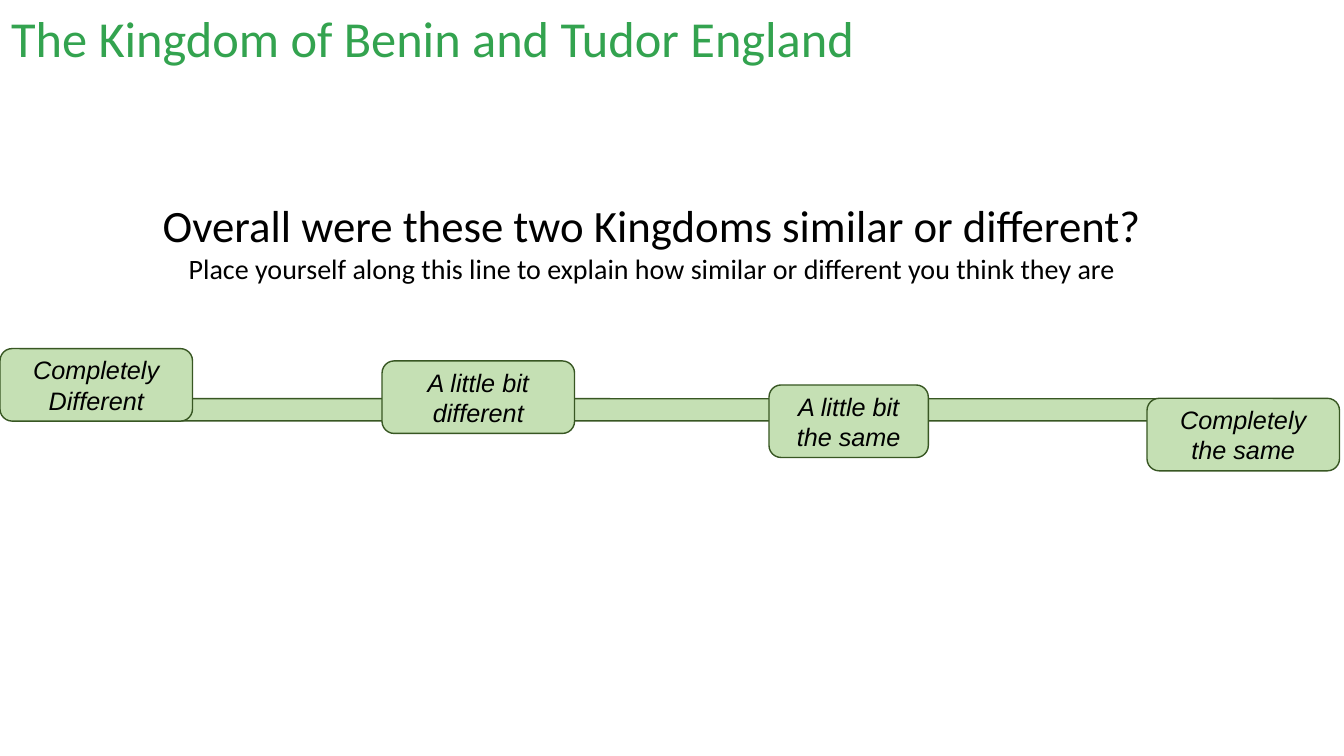
"""Build a slide placing Benin and Tudor England on a similarity line."""
import pptx
import pptx.util
from pptx.dml.color import RGBColor
from pptx.enum.shapes import MSO_SHAPE
from pptx.enum.text import MSO_ANCHOR, MSO_AUTO_SIZE, PP_ALIGN

Pt = pptx.util.Pt

TITLE = "The Kingdom of Benin and Tudor England"
QUESTION_LINES = [
    ("Overall were these two Kingdoms similar or different?", 32),
    ("Place yourself along this line to explain how similar or different you think they are", 20),
]
LABELS = [
    ("Completely Different", 0, 249, 137.5),
    ("Completely the same", 819.3, 284.5, 137.5),
    ("A little bit the same", 549.3, 275, 113.8),
    ("A little bit different", 272.9, 257.8, 137.5),
]
LABEL_HEIGHT = 51.8
LINE_BAR = (20.2, 284.8, 910.8, 15.8)

TITLE_GREEN = RGBColor(0x33, 0xA3, 0x4F)
FILL_GREEN = RGBColor(0xC5, 0xE0, 0xB4)
OUTLINE_GREEN = RGBColor(0x38, 0x57, 0x23)
BLACK = RGBColor(0, 0, 0)


def format_font(paragraph, name, size, color, italic=None):
    for run in paragraph.runs:
        run.font.name = name
        run.font.size = Pt(size)
        run.font.color.rgb = color
        run.font.italic = italic


def add_green_bar(slide, left, top, width, height):
    bar = slide.shapes.add_shape(
        MSO_SHAPE.ROUNDED_RECTANGLE, Pt(left), Pt(top), Pt(width), Pt(height))
    bar.shadow.inherit = False
    bar.fill.solid()
    bar.fill.fore_color.rgb = FILL_GREEN
    bar.line.color.rgb = OUTLINE_GREEN
    bar.line.width = Pt(1)
    return bar


def add_title(slide):
    title = slide.shapes.title
    title.left, title.top, title.width, title.height = Pt(0.7), Pt(6.5), Pt(872), Pt(130.3)
    frame = title.text_frame
    frame.text = TITLE
    frame.word_wrap = True
    frame.auto_size = MSO_AUTO_SIZE.NONE
    frame.vertical_anchor = MSO_ANCHOR.TOP
    paragraph = frame.paragraphs[0]
    paragraph.alignment = PP_ALIGN.LEFT
    paragraph.line_spacing = 0.9
    format_font(paragraph, "Calibri", 36, TITLE_GREEN)


def add_question(slide):
    box = slide.shapes.add_textbox(Pt(15.8), Pt(137.5), Pt(900), Pt(70.6))
    frame = box.text_frame
    frame.word_wrap = True
    frame.text = "\n".join(text for text, size in QUESTION_LINES)
    for paragraph, (text, size) in zip(frame.paragraphs, QUESTION_LINES):
        paragraph.alignment = PP_ALIGN.CENTER
        format_font(paragraph, "Calibri", size, BLACK)


def add_label(slide, text, left, top, width):
    label = add_green_bar(slide, left, top, width, LABEL_HEIGHT)
    frame = label.text_frame
    frame.text = text
    frame.word_wrap = True
    frame.vertical_anchor = MSO_ANCHOR.MIDDLE
    paragraph = frame.paragraphs[0]
    paragraph.alignment = PP_ALIGN.CENTER
    format_font(paragraph, "Arial", 18, BLACK, italic=True)


def main():
    presentation = pptx.Presentation()
    presentation.slide_width, presentation.slide_height = Pt(960), Pt(540)
    slide = presentation.slides.add_slide(presentation.slide_layouts.get_by_name("Title Only"))
    add_title(slide)
    add_question(slide)
    add_green_bar(slide, *LINE_BAR)
    for label in LABELS:
        add_label(slide, *label)
    presentation.save("out.pptx")


if __name__ == "__main__":
    main()
